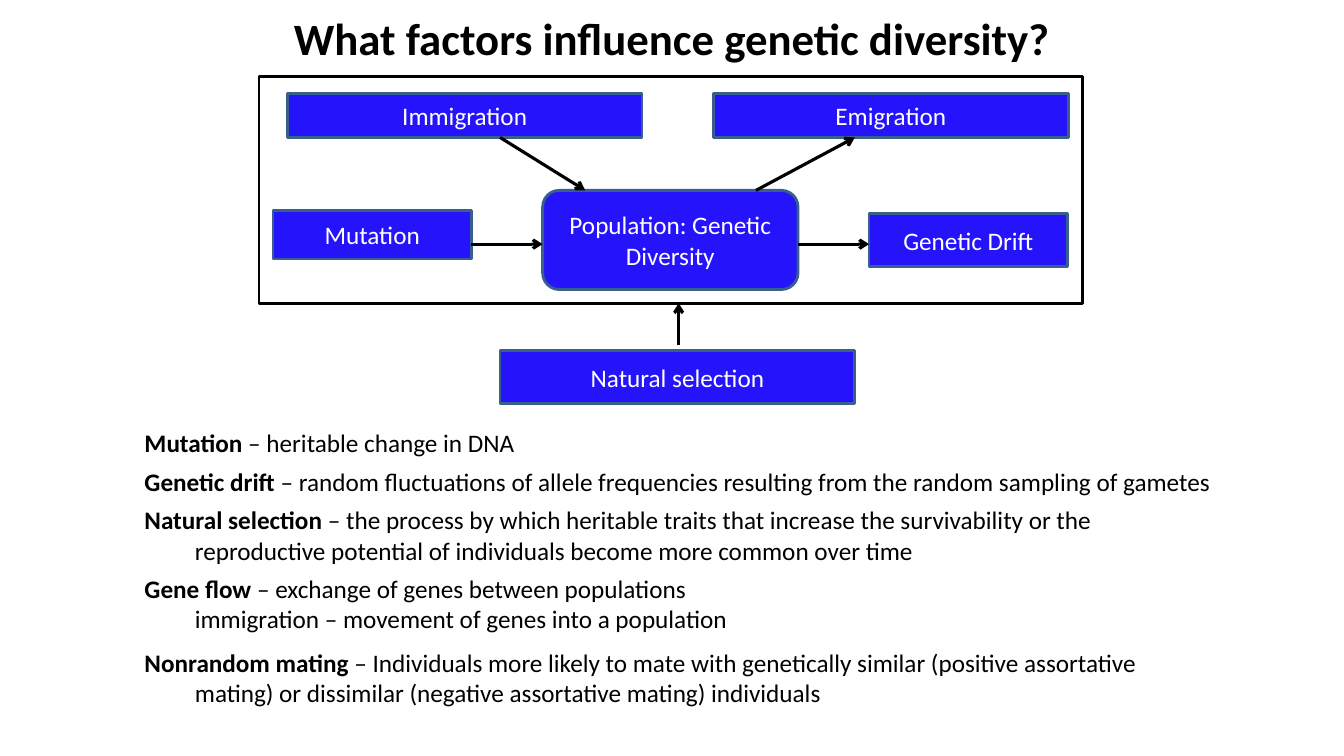
"""Build a slide on the factors that influence genetic diversity."""
import dataclasses

import lxml.etree
import pptx
import pptx.dml.color
import pptx.enum.shapes
import pptx.enum.text
import pptx.oxml.ns
import pptx.util

Pt = pptx.util.Pt
qn = pptx.oxml.ns.qn
Shape = pptx.enum.shapes.MSO_SHAPE
Align = pptx.enum.text.PP_ALIGN
Anchor = pptx.enum.text.MSO_ANCHOR

FONT = "Calibri"
BLACK, WHITE, BLUE, EDGE = "000000", "FFFFFF", "2413FB", "3A5F8C"
WIDE, SLIM = 253.4, 141.8
HANG = 36


@dataclasses.dataclass
class Box:
    text: str
    left: float
    top: float
    width: float
    height: float
    kind: int = Shape.RECTANGLE
    fill: str = BLUE
    edge: str = EDGE


@dataclasses.dataclass
class Arrow:
    x1: float
    y1: float
    x2: float
    y2: float


@dataclasses.dataclass
class Entry:
    term: str
    text: str
    first: float = -HANG
    before: float = 0
    after: float = 0


BOXES = [
    Box("", 185, 54.6, 588.4, 162, fill=WHITE, edge=BLACK),
    Box("Population: Genetic Diversity", 387.6, 136, 182.4, 70.8, Shape.ROUNDED_RECTANGLE),
    Box("Mutation", 195, 150.2, SLIM, 34.8),
    Box("Genetic Drift", 620.8, 152.4, SLIM, 38),
    Box("Immigration", 205.2, 66.6, WIDE, 31.6),
    Box("Emigration", 509.6, 66.6, WIDE, 31.6),
    Box("Natural selection", 357.2, 250.4, WIDE, 38),
]

ARROWS = [
    Arrow(357.2, 98.2, 418, 136),
    Arrow(540, 136, 610.6, 98.2),
    Arrow(336.8, 174.4, 387.6, 174.4),
    Arrow(570, 174.4, 620.8, 174.4),
    Arrow(484.8, 246.4, 484.8, 216.6),
]

ENTRIES = [
    Entry("Mutation", " – heritable change in DNA", after=6),
    Entry("Genetic drift ", "– random fluctuations of allele frequencies resulting "
          "from the random sampling of gametes", after=6),
    Entry("Natural selection ", "– the process by which heritable traits that increase "
          "the survivability or the reproductive potential of individuals become more "
          "common over time", after=6),
    Entry("Gene flow ", "– exchange of genes between populations"),
    Entry("", "immigration – movement of genes into a population", first=0),
    Entry("Nonrandom mating ", "– Individuals more likely to mate with genetically "
          "similar (positive assortative mating) or dissimilar (negative assortative "
          "mating) individuals", before=9.6),
]


def paint(color, code: str) -> None:
    """Set a colour from a hex string."""
    color.rgb = pptx.dml.color.RGBColor.from_string(code)


def place(shape, left: float, top: float, width: float, height: float) -> None:
    """Move and size a shape in points."""
    shape.left, shape.top = Pt(left), Pt(top)
    shape.width, shape.height = Pt(width), Pt(height)


def add_run(para, text: str, color: str = BLACK, size: float = 18, bold: bool = False) -> None:
    """Append one formatted run."""
    run = para.add_run()
    run.text = text
    run.font.name, run.font.size, run.font.bold = FONT, Pt(size), bold
    paint(run.font.color, color)


def draw_box(slide, box: Box) -> None:
    """Draw a filled box with its centred label."""
    shape = slide.shapes.add_shape(
        box.kind, Pt(box.left), Pt(box.top), Pt(box.width), Pt(box.height))
    shape.shadow.inherit = False
    shape.fill.solid()
    paint(shape.fill.fore_color, box.fill)
    paint(shape.line.color, box.edge)
    shape.line.width = Pt(2)
    if box.text:
        frame = shape.text_frame
        frame.word_wrap = True
        frame.vertical_anchor = Anchor.MIDDLE
        frame.paragraphs[0].alignment = Align.CENTER
        add_run(frame.paragraphs[0], box.text, WHITE)


def draw_arrow(slide, arrow: Arrow) -> None:
    """Draw a straight line with an open head at its end."""
    line = slide.shapes.add_connector(
        pptx.enum.shapes.MSO_CONNECTOR.STRAIGHT,
        Pt(arrow.x1), Pt(arrow.y1), Pt(arrow.x2), Pt(arrow.y2))
    paint(line.line.color, BLACK)
    line.line.width = Pt(2.25)
    props = line.element.spPr
    lxml.etree.SubElement(props.find(qn("a:ln")), qn("a:tailEnd"), type="arrow")
    lxml.etree.SubElement(props, qn("a:effectLst"))


def write_entry(para, entry: Entry) -> None:
    """Write a term and its meaning with a hanging indent."""
    para.alignment = Align.LEFT
    para.line_spacing = 1.0
    para.space_before, para.space_after = Pt(entry.before), Pt(entry.after)
    props = para._p.get_or_add_pPr()
    props.set("marL", str(Pt(HANG)))
    props.set("indent", str(Pt(entry.first)))
    lxml.etree.SubElement(props, qn("a:buNone"))
    if entry.term:
        add_run(para, entry.term, bold=True)
    add_run(para, entry.text)


def main() -> None:
    """Build and save the slide."""
    deck = pptx.Presentation()
    deck.slide_width, deck.slide_height = Pt(960), Pt(540)
    slide = deck.slides.add_slide(deck.slide_layouts[1])

    title = slide.shapes.title
    place(title, 156, 1.4, 648, 50.4)
    title.text_frame.vertical_anchor = Anchor.MIDDLE
    head = title.text_frame.paragraphs[0]
    head.alignment = Align.CENTER
    add_run(head, "What factors influence genetic diversity?", size=32, bold=True)

    body = slide.placeholders[1]
    place(body, 96, 301.6, 780, 231.2)
    frame = body.text_frame
    frame.auto_size = pptx.enum.text.MSO_AUTO_SIZE.NONE
    frame.vertical_anchor = Anchor.TOP
    for num, entry in enumerate(ENTRIES):
        write_entry(frame.add_paragraph() if num else frame.paragraphs[0], entry)

    for box in BOXES:
        draw_box(slide, box)
    for arrow in ARROWS:
        draw_arrow(slide, arrow)
    deck.save("out.pptx")


if __name__ == "__main__":
    main()
